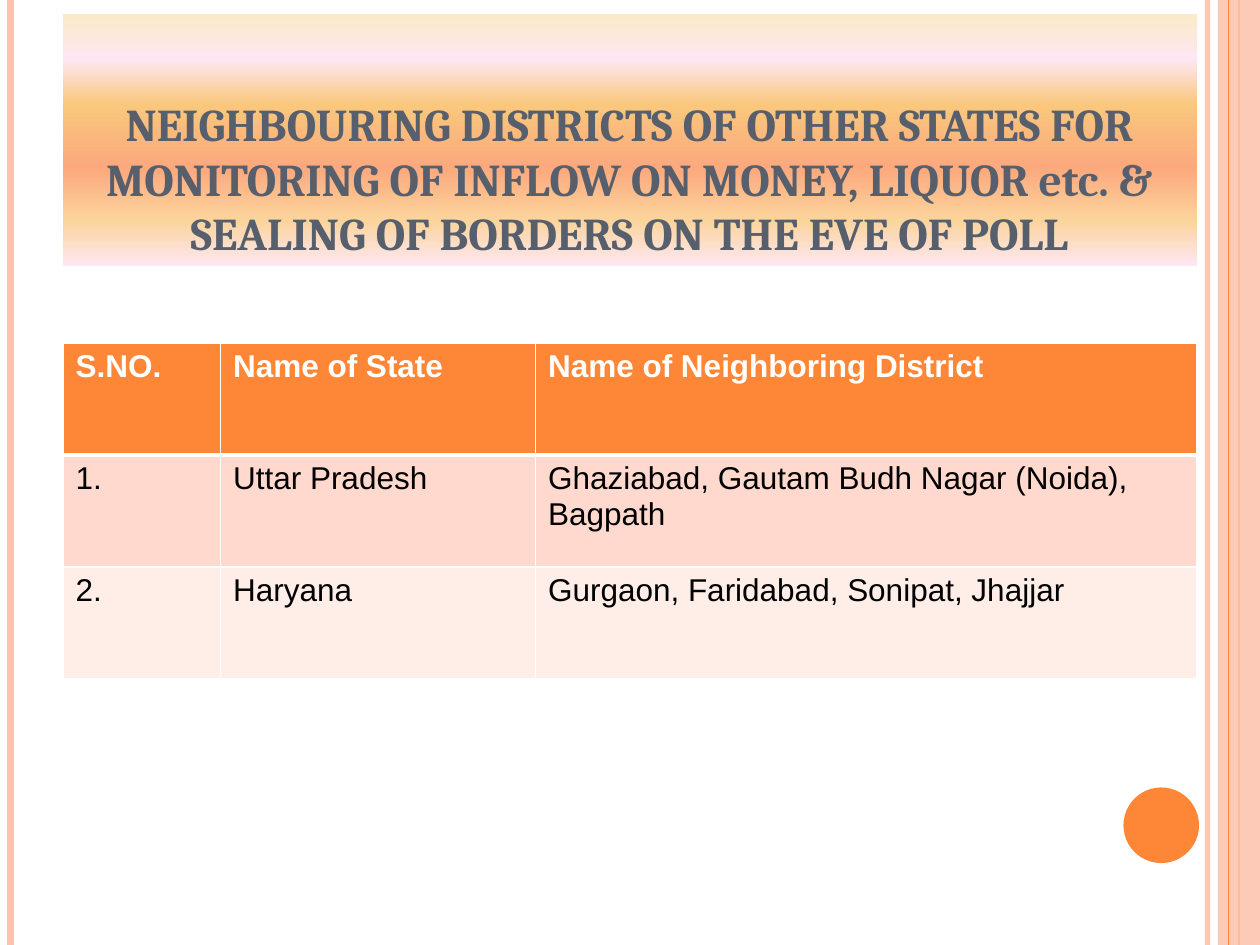
import lxml.etree
import pptx
import pptx.dml.color
import pptx.enum.shapes
import pptx.enum.text
import pptx.oxml
import pptx.oxml.ns
import pptx.util

Pt = pptx.util.Pt
RGBColor = pptx.dml.color.RGBColor
qn = pptx.oxml.ns.qn

WHITE = RGBColor(0xFF, 0xFF, 0xFF)
BLACK = RGBColor(0x00, 0x00, 0x00)
ORANGE = RGBColor(0xFE, 0x86, 0x37)
PEACH = RGBColor(0xFE, 0xC3, 0xAE)
SLATE = RGBColor(0x57, 0x5F, 0x6D)
ROW_FILLS = [ORANGE, RGBColor(0xFF, 0xD9, 0xCE), RGBColor(0xFF, 0xED, 0xE8)]
TITLE_STOPS = [
    (0, RGBColor(0xFB, 0xEA, 0xC7)),
    (18, RGBColor(0xFE, 0xE7, 0xF2)),
    (36, RGBColor(0xFA, 0xC7, 0x7D)),
    (61, RGBColor(0xFB, 0xA9, 0x7D)),
    (82, RGBColor(0xFB, 0xD4, 0x9C)),
    (100, RGBColor(0xFE, 0xE7, 0xF2)),
]
WIDTH, HEIGHT = 720, 540


def add_color(parent, color, alpha=100):
    """Append a colour element, with its opacity in percent, to parent."""
    element = lxml.etree.SubElement(parent, qn("a:srgbClr"), val=str(color))
    if alpha < 100:
        lxml.etree.SubElement(element, qn("a:alpha"), val=str(alpha * 1000))


def add_vertical_line(slide, x, color, width, alpha=100):
    line = slide.shapes.add_connector(
        pptx.enum.shapes.MSO_CONNECTOR.STRAIGHT, Pt(x), Pt(0), Pt(x), Pt(HEIGHT))
    line.line.width = Pt(width)
    line.line.fill.solid()
    solid = line.line._get_or_add_ln().find(qn("a:solidFill"))
    add_color(solid, color, alpha)
    lxml.etree.SubElement(line._element.spPr, qn("a:effectLst"))


deck = pptx.Presentation()
deck.slide_width, deck.slide_height = Pt(WIDTH), Pt(HEIGHT)
slide = deck.slides.add_slide(deck.slide_layouts[6])

# Side stripes and the circle
add_vertical_line(slide, 690, PEACH, 3, 93)
add_vertical_line(slide, 6, PEACH, 4.5)
add_vertical_line(slide, 708, ORANGE, 1.5)

band = slide.shapes.add_shape(
    pptx.enum.shapes.MSO_SHAPE.RECTANGLE, Pt(696), Pt(0), Pt(24), Pt(HEIGHT))
band.shadow.inherit = False
band.line.fill.background()
band.fill.solid()
add_color(band._element.spPr.find(qn("a:solidFill")), PEACH, 87)

add_vertical_line(slide, 702, ORANGE, 0.75)

circle = slide.shapes.add_shape(
    pptx.enum.shapes.MSO_SHAPE.OVAL, Pt(642), Pt(450), Pt(43.2), Pt(43.2))
circle.shadow.inherit = False
circle.line.fill.background()
circle.fill.solid()
circle.fill.fore_color.rgb = ORANGE

# Title on a gradient
title = slide.shapes.add_textbox(Pt(36), Pt(8), Pt(648), Pt(144))
title.fill.gradient()
title.fill.gradient_angle = 270
stops = title._element.spPr.find(qn("a:gradFill")).find(qn("a:gsLst"))
for stop in list(stops):
    stops.remove(stop)
for position, color in TITLE_STOPS:
    add_color(lxml.etree.SubElement(stops, qn("a:gs"), pos=str(position * 1000)), color)

frame = title.text_frame
frame.word_wrap = True
frame.vertical_anchor = pptx.enum.text.MSO_ANCHOR.BOTTOM
frame.text = ("NEIGHBOURING DISTRICTS OF OTHER STATES FOR MONITORING OF INFLOW ON MONEY, "
              "LIQUOR etc. & SEALING OF BORDERS ON THE EVE OF POLL")
para = frame.paragraphs[0]
para.alignment = pptx.enum.text.PP_ALIGN.CENTER
font = para.runs[0].font
font.name, font.size, font.bold = "Cambria", Pt(26), True
font.color.rgb = SLATE

# Table of neighbouring districts
rows = [
    ("S.NO.", "Name of State", "Name of Neighboring District"),
    ("1.", "Uttar Pradesh", "Ghaziabad, Gautam Budh Nagar (Noida), Bagpath"),
    ("2.", "Haryana", "Gurgaon, Faridabad, Sonipat, Jhajjar"),
]
table = slide.shapes.add_table(3, 3, Pt(36), Pt(196), Pt(648), Pt(192)).table
for column, width in zip(table.columns, (90, 180, 378)):
    column.width = Pt(width)

for row_index, texts in enumerate(rows):
    is_header = row_index == 0
    for column_index, text in enumerate(texts):
        cell = table.cell(row_index, column_index)
        properties = cell._tc.get_or_add_tcPr()
        border_widths = {"L": 1, "R": 1, "T": 3 if row_index == 1 else 1,
                         "B": 3 if is_header else 1}
        for side, width in border_widths.items():
            border = lxml.etree.SubElement(properties, qn("a:ln" + side), w=str(Pt(width)))
            add_color(lxml.etree.SubElement(border, qn("a:solidFill")), WHITE)
        cell.fill.solid()
        cell.fill.fore_color.rgb = ROW_FILLS[row_index]
        cell.text_frame.text = text
        font = cell.text_frame.paragraphs[0].runs[0].font
        font.name, font.size, font.bold = "Arial", Pt(18), is_header
        font.color.rgb = WHITE if is_header else BLACK

deck.save("out.pptx")
